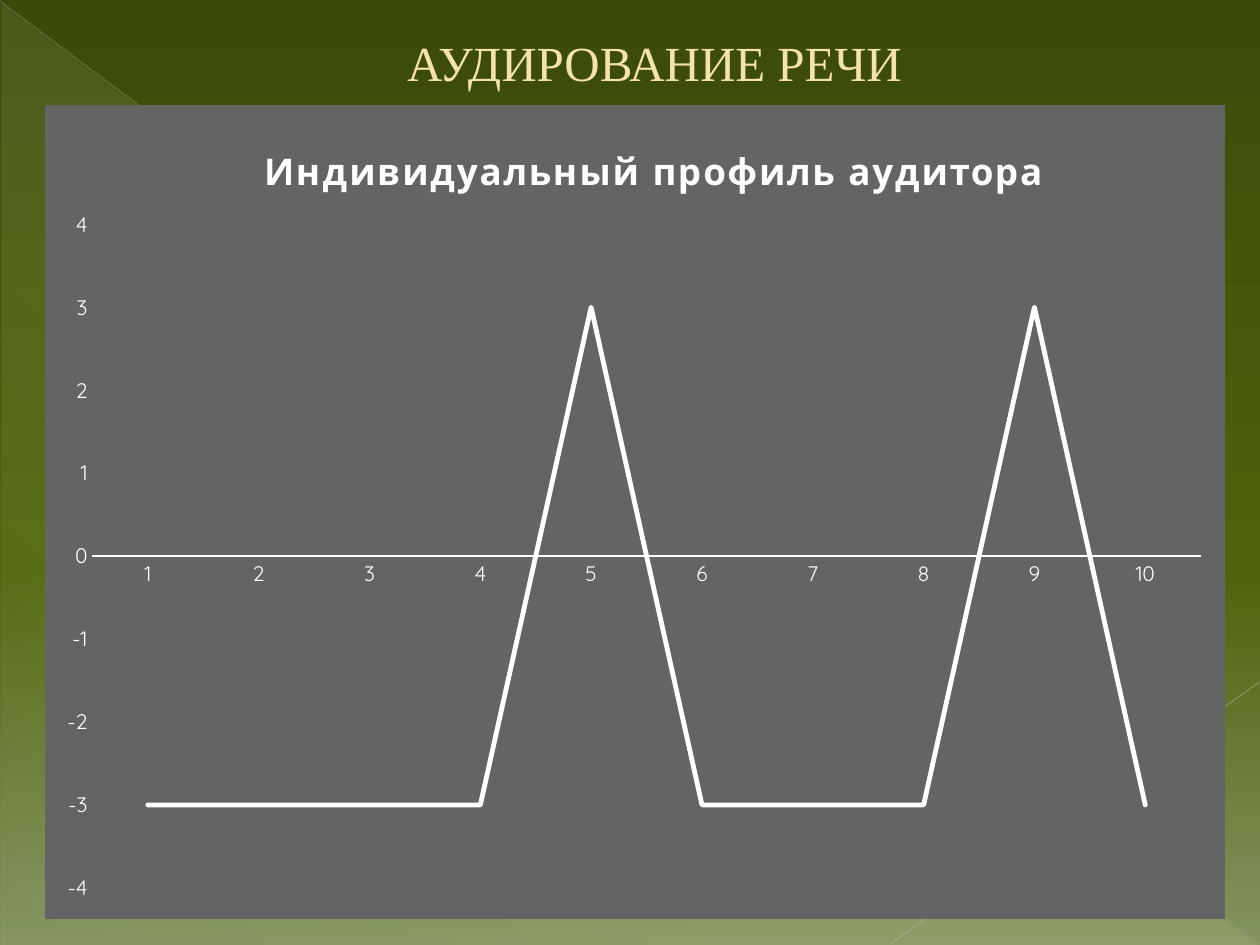
from pptx import Presentation
from pptx.chart.data import CategoryChartData
from pptx.dml.color import RGBColor
from pptx.enum.chart import XL_CHART_TYPE, XL_MARKER_STYLE, XL_TICK_MARK
from pptx.enum.shapes import MSO_CONNECTOR, MSO_SHAPE
from pptx.enum.text import MSO_ANCHOR, PP_ALIGN
from pptx.oxml import parse_xml
from pptx.oxml.ns import nsdecls, qn
from pptx.util import Pt

COLORS = {
    "top": "3B4A09", "middle": "4F630C", "bottom": "849360",
    "glow": "FEFAC9", "fall": "BABDB3", "rise": "C1C4BC",
    "title": "F5E4A9", "panel": "646464", "white": "FFFFFF",
}
SERIF, SANS = "Times New Roman", "Quicksand"


def color(name):
    return RGBColor.from_string(COLORS[name])


def color_xml(name, opacity=100):
    return (f'<a:srgbClr val="{COLORS[name]}">'
            f'<a:alpha val="{opacity * 1000}"/></a:srgbClr>')


def set_gradient(fill_parent, stops, angle):
    """Replace the gradient in fill_parent; stops are (position, color, opacity)."""
    stop_xml = "".join(f'<a:gs pos="{position * 1000}">{color_xml(name, opacity)}</a:gs>'
                       for position, name, opacity in stops)
    gradient = parse_xml(f'<a:gradFill {nsdecls("a")} rotWithShape="1">'
                         f'<a:gsLst>{stop_xml}</a:gsLst>'
                         f'<a:lin ang="{angle * 60000}" scaled="0"/></a:gradFill>')
    old = fill_parent.find(qn("a:gradFill"))
    fill_parent.replace(old, gradient)


def add_backdrop(page, box):
    left, top, width, height = box
    page.background.fill.gradient()
    set_gradient(page.background.fill._xPr,
                 [(0, "top", 100), (60, "middle", 100), (100, "bottom", 100)], 90)

    # Pale triangle
    triangle = page.shapes.add_shape(MSO_SHAPE.RIGHT_TRIANGLE, Pt(left + 0.7), Pt(top + 1.4),
                                     Pt(width - 1.4), Pt(height - 1.4))
    triangle.shadow.inherit = False
    triangle.line.fill.background()
    triangle.fill.gradient()
    set_gradient(triangle.element.spPr,
                 [(0, "glow", 10), (70, "glow", 8), (100, "glow", 1)], 133)

    # Thin diagonals
    right, bottom = left + width - 0.7, top + height - 0.7
    diagonals = [
        (left, top + 0.7, right, bottom, "fall", 0.39, 35),
        (left + width, top + 389.5, left + 509, bottom, "rise", 0.47, 45),
    ]
    for x1, y1, x2, y2, name, weight, opacity in diagonals:
        line = page.shapes.add_connector(MSO_CONNECTOR.STRAIGHT, Pt(x1), Pt(y1), Pt(x2), Pt(y2))
        line.line.width = Pt(weight)
        line.line.color.rgb = color(name)
        fill = line.element.spPr.find(".//" + qn("a:solidFill"))
        fill[0].append(parse_xml(f'<a:alpha {nsdecls("a")} val="{opacity * 1000}"/>'))
        line.element.spPr.append(parse_xml(f'<a:effectLst {nsdecls("a")}/>'))


def add_title(page, box):
    title = page.shapes.title
    title.left, title.top, title.width, title.height = map(Pt, box)
    frame = title.text_frame
    frame.text = "АУДИРОВАНИЕ РЕЧИ"
    frame.word_wrap = True
    frame.vertical_anchor = MSO_ANCHOR.MIDDLE
    para = frame.paragraphs[0]
    para.alignment = PP_ALIGN.CENTER
    para.font.size = Pt(28)
    para.font.name = SERIF
    para.font.color.rgb = color("title")


def set_layout(parent, **parts):
    """Place a chart part by fractions of the chart's size."""
    target = '<c:layoutTarget val="inner"/>' if "w" in parts else ""
    modes = "".join(f'<c:{key}Mode val="edge"/>' for key in "xy")
    values = "".join(f'<c:{key} val="{value}"/>' for key, value in parts.items())
    layout = parse_xml(f'<c:layout {nsdecls("c")}><c:manualLayout>{target}{modes}{values}'
                       f'</c:manualLayout></c:layout>')
    old = parent.find(qn("c:layout"))
    if old is not None:
        parent.remove(old)
    text = parent.find(qn("c:tx"))
    parent.insert(0 if text is None else 1, layout)


def add_profile_chart(page, box):
    data = CategoryChartData()
    data.categories = [str(number) for number in range(1, 11)]
    data.add_series("Series 1", [3 if number in (5, 9) else -3 for number in range(1, 11)])
    chart = page.shapes.add_chart(XL_CHART_TYPE.LINE, *map(Pt, box), data).chart
    chart.has_legend = False
    chart.font.size = Pt(10)
    chart.font.name = SANS
    chart.font.color.rgb = color("white")

    # Grey panel
    panel = parse_xml(
        f'<c:spPr {nsdecls("c", "a")}><a:solidFill>{color_xml("panel")}</a:solidFill>'
        f'<a:ln w="{Pt(0.75)}"><a:solidFill>{color_xml("panel")}</a:solidFill></a:ln></c:spPr>')
    chart.element.find(qn("c:txPr")).addprevious(panel)

    # Chart title
    chart.has_title = True
    title = chart.chart_title
    title.text_frame.text = "Индивидуальный профиль аудитора"
    title.include_in_layout = False
    span = title.text_frame.paragraphs[0].runs[0]
    span.font.size = Pt(21)
    span.font.bold = True
    span.font.name = SANS
    span.font.color.rgb = color("white")
    span.font._element.set("spc", "100")
    set_layout(title.element if hasattr(title, "element") else title._element, x=0.18, y=0.04)

    # Axes
    for axis in (chart.category_axis, chart.value_axis):
        axis.has_major_gridlines = False
        axis.major_tick_mark = axis.minor_tick_mark = XL_TICK_MARK.NONE
        axis.tick_labels.font.size = Pt(12)
        axis.tick_labels.font.name = SANS
        axis.tick_labels.font.color.rgb = color("white")
    chart.category_axis.format.line.width = Pt(1)
    chart.category_axis.format.line.color.rgb = color("white")
    chart.value_axis.format.line.fill.background()
    chart.value_axis.minimum_scale, chart.value_axis.maximum_scale = -4, 4
    chart.value_axis.major_unit = 1

    # Profile line
    plot = chart.plots[0]
    plot.vary_by_categories = False
    series = plot.series[0]
    series.smooth = False
    series.marker.style = XL_MARKER_STYLE.NONE
    series.format.line.width = Pt(2.75)
    series.format.line.color.rgb = color("white")
    chart.element.xpath(".//c:ser/c:spPr/a:ln")[0].set("cap", "rnd")
    set_layout(chart.element.xpath(".//c:plotArea")[0], x=0.04, y=0.146, w=0.94, h=0.817)


def main():
    deck = Presentation()
    deck.slide_width, deck.slide_height = Pt(720), Pt(540)
    page = deck.slides.add_slide(deck.slide_layouts[5])
    add_backdrop(page, (0, 0, 720, 540))
    add_profile_chart(page, (25.5, 60, 674.5, 465))
    add_title(page, (42.5, 15, 663, 41))
    deck.save("out.pptx")


if __name__ == "__main__":
    main()
